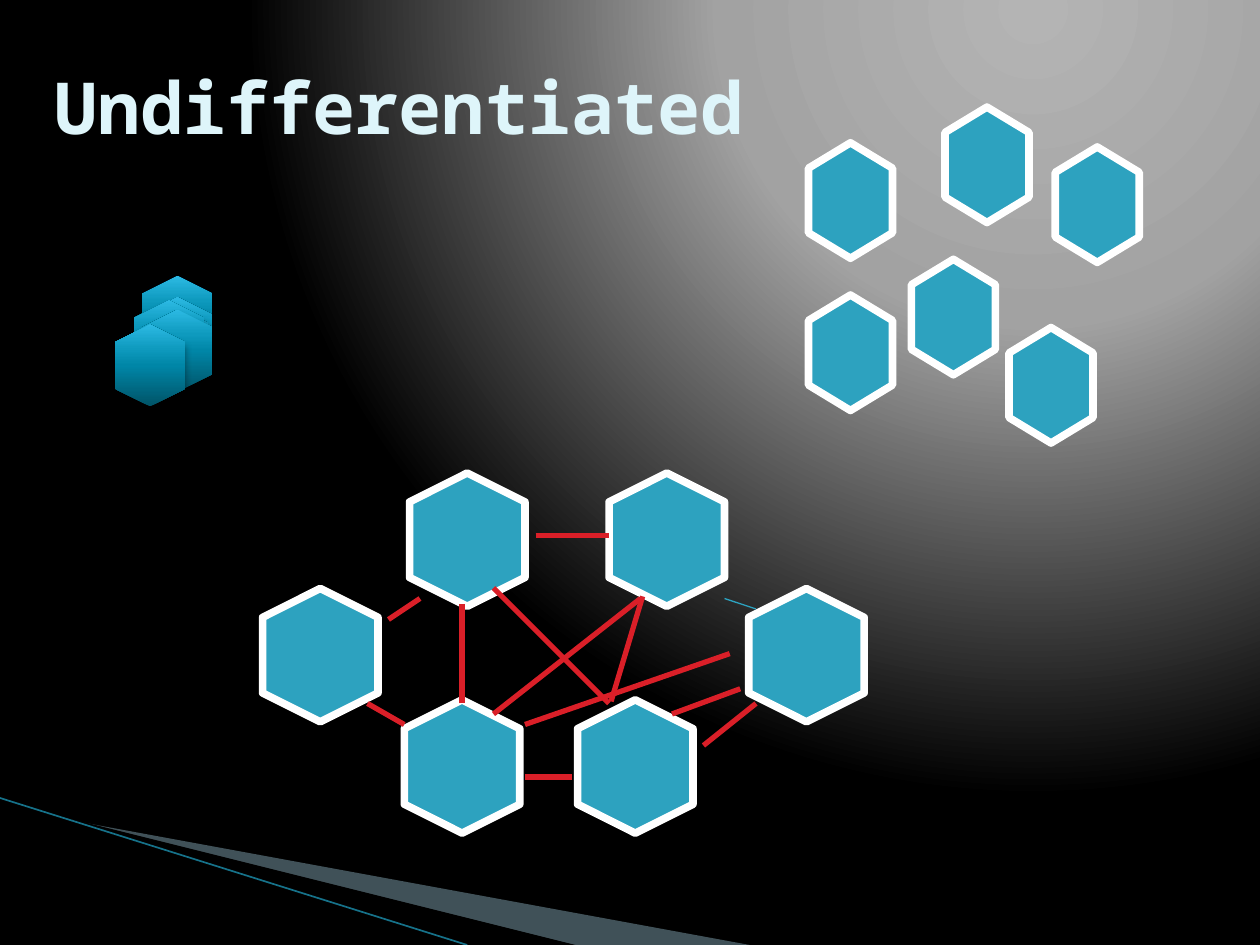
import pptx
import pptx.dml.color
import pptx.enum.shapes
import pptx.enum.text
import pptx.oxml
import pptx.oxml.ns
import pptx.util
from lxml import etree

# The slide is a grid of 120 columns by 90 rows, one cell = 1/12 inch
COLS, ROWS = 120, 90
CELL = pptx.util.Inches(10) / COLS

HUES = {"title": "DEF5FA", "teal": "2DA2BF", "edge": "FFFFFF", "link": "DA1F28",
        "wedge": "A0CBDC", "black": "000000", "streak": "16728A"}
GLOW = [(0, "B4B4B4"), (40, "A2A2A2"), (100, "000000")]
GLOSS = [(0, "005367"), (50, "0086A7"), (70, "0E9ABE"), (100, "2CB9E3")]

# Centres of the preset hexagons, top left corners of the loose cells
STACK = [(16.9, 30.2), (16.9, 32.2), (16.5, 33), (16.1, 32.5), (16.9, 33.4), (14.3, 34.8)]
LOOSE = [(90, 10.2), (77, 13.6), (86.8, 24.7), (100.5, 14), (96.1, 31.2), (77, 28.1)]
NET = [(63.5, 51.4), (44.5, 51.4), (30.5, 62.4), (76.8, 62.4), (60.5, 73), (44, 73)]
LINKS = [(40, 57, 37, 59), (35, 67, 38.5, 69), (51, 51, 58, 51), (72, 67, 67, 71),
         (54.5, 74, 50, 74), (44, 67, 44, 57.5), (47, 68, 61, 57), (50, 69, 69.5, 62.25),
         (58, 67, 47, 56), (58.2, 66.8, 61.2, 56.8), (64, 68, 70.5, 65.6)]
A_NS = 'xmlns:a="http://schemas.openxmlformats.org/drawingml/2006/main"'


def grid(*cells):
    return [round(c * CELL) for c in cells]


def hue(name):
    return pptx.dml.color.RGBColor.from_string(HUES[name])


def paint(shape, fill, edge=None):
    shape.shadow.inherit = False
    shape.fill.solid()
    shape.fill.fore_color.rgb = hue(fill)
    if edge:
        shape.line.color.rgb = hue(edge)
        shape.line.width = pptx.util.Pt(4.33)
    else:
        shape.line.fill.background()


def blend(props, stops, path):
    """Swap the solid fill of props for a gradient."""
    marks = "".join(f'<a:gs pos="{pos * 1000}"><a:srgbClr val="{rgb}"/></a:gs>'
                    for pos, rgb in stops)
    new = pptx.oxml.parse_xml(
        f'<a:gradFill {A_NS} rotWithShape="0"><a:gsLst>{marks}</a:gsLst>{path}</a:gradFill>')
    old = props.find(pptx.oxml.ns.qn("a:solidFill"))
    props.replace(old, new)


def shade(shape):
    box = shape.element.spPr.find(pptx.oxml.ns.qn("a:effectLst"))
    box.append(pptx.oxml.parse_xml(
        f'<a:outerShdw {A_NS} blurRad="50800" dist="38100" dir="5400000" rotWithShape="0">'
        '<a:srgbClr val="000000"><a:alpha val="35000"/></a:srgbClr></a:outerShdw>'))


def outline(shapes, points, fill, edge=None):
    pts = [grid(*p) for p in points]
    pen = shapes.build_freeform(*pts[0])
    pen.add_line_segments(pts[1:], close=True)
    shape = pen.convert_to_shape()
    paint(shape, fill, edge)
    return shape


def cell(shapes, left, top, wide=8, high=11):
    mid, right, end = left + wide / 2, left + wide, top + high
    cut = high * 0.22
    outline(shapes, [(mid, top), (right, top + cut), (right, end - cut), (mid, end),
                     (left, end - cut), (left, top + cut)], "teal", "edge")


def hexa(shapes, mid, row, wide, high, edge=None):
    kind = pptx.enum.shapes.MSO_SHAPE.HEXAGON
    shape = shapes.add_shape(kind, *grid(mid - wide / 2, row - high / 2, wide, high))
    shape.rotation = 90
    paint(shape, "teal", edge)
    return shape


def link(shapes, ends, color="link", width=3):
    kind = pptx.enum.shapes.MSO_CONNECTOR.STRAIGHT
    line = shapes.add_connector(kind, *grid(*ends))
    line.line.color.rgb = hue(color)
    line.line.width = pptx.util.Pt(width)
    etree.SubElement(line.element.spPr, pptx.oxml.ns.qn("a:effectLst"))


def backdrop(slide):
    slide.background.fill.solid()
    blend(slide.element.xpath(".//p:bgPr")[0], GLOW,
          '<a:path path="circle"><a:fillToRect l="65000" t="0" r="0" b="98000"/></a:path>')
    wedge = outline(slide.shapes, [(6.6, 78.1), (71.4, ROWS), (54.7, ROWS), (6.6, 78)], "wedge")
    tint = wedge.element.spPr.xpath("./a:solidFill/a:srgbClr")[0]
    etree.SubElement(tint, pptx.oxml.ns.qn("a:alpha"), val="40000")
    outline(slide.shapes, [(6.4, 77.9), (54.8, ROWS), (44.6, ROWS), (6.5, 78)], "black")
    link(slide.shapes, (0, 76, 44.5, ROWS), "streak", 0.95)


def heading(slide, words):
    title = slide.shapes.title
    place = dict(zip(("left", "top", "width", "height"), grid(4, 2.6, 108, 15)))
    for name, value in place.items():
        setattr(title, name, value)
    frame = title.text_frame
    frame.text = words
    frame.vertical_anchor = pptx.enum.text.MSO_ANCHOR.MIDDLE
    para = frame.paragraphs[0]
    para.alignment = pptx.enum.text.PP_ALIGN.LEFT
    font = para.runs[0].font
    style = {"name": "Noto Sans Mono", "size": pptx.util.Pt(41), "bold": True}
    for name, value in style.items():
        setattr(font, name, value)
    font.color.rgb = hue("title")


def main():
    deck = pptx.Presentation()
    deck.slide_width, deck.slide_height = grid(COLS, ROWS)
    slide = deck.slides.add_slide(deck.slide_layouts[5])
    backdrop(slide)
    heading(slide, "Undifferentiated")

    # Glossy stack on the left
    stack = slide.shapes.add_group_shape().shapes
    for spot in STACK:
        shape = hexa(stack, *spot, 7.8, 6.7)
        blend(shape.element.spPr, GLOSS, '<a:lin ang="16200000" scaled="0"/>')
        shade(shape)

    # Loose cells at the top right
    loose = slide.shapes.add_group_shape().shapes
    for spot in LOOSE:
        cell(loose, *spot)

    # Linked network below
    net = slide.shapes.add_group_shape().shapes
    for spot in NET:
        hexa(net, *spot, 12.7, 11, "edge")
    for ends in LINKS:
        link(slide.shapes, ends)
    link(slide.shapes, (69, 57, 72, 58), "teal", 0.75)

    deck.save("out.pptx")


if __name__ == "__main__":
    main()
